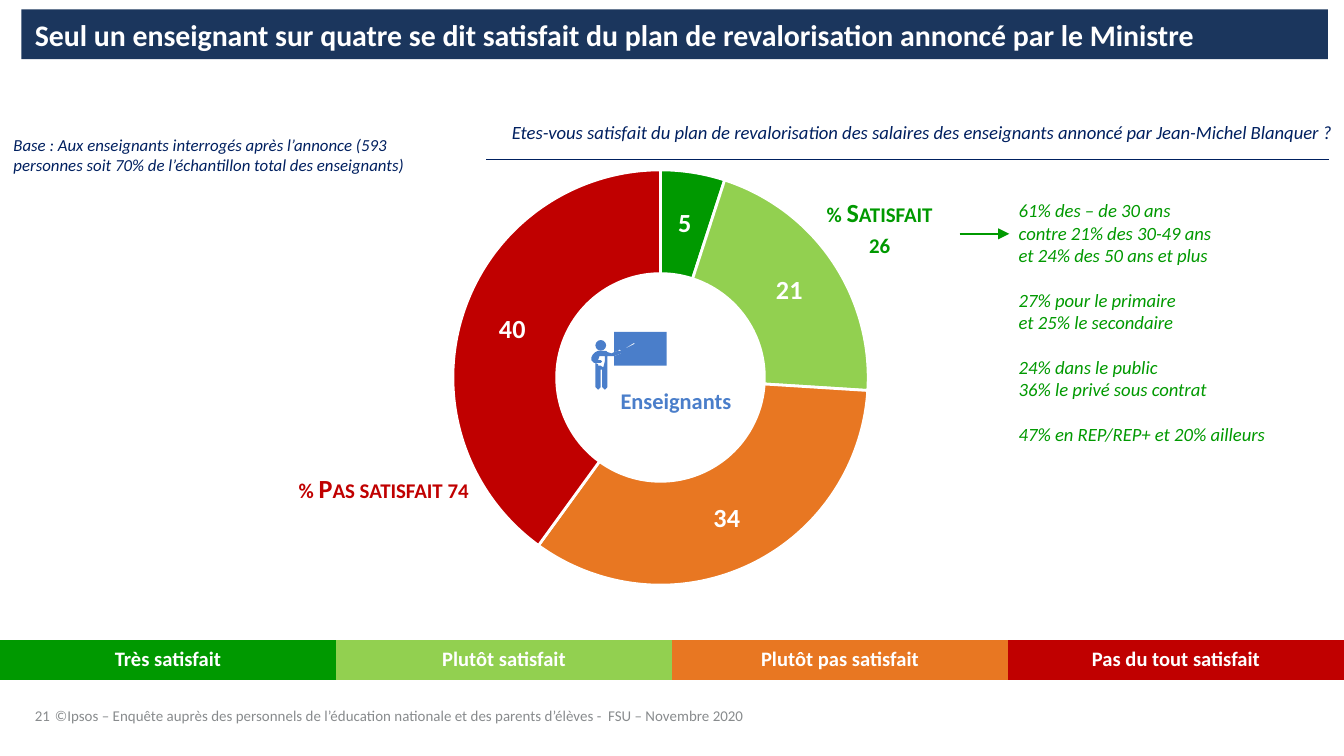
from pptx import Presentation
from pptx.chart.data import CategoryChartData as ChartData
from pptx.dml.color import RGBColor
from pptx.enum.chart import XL_CHART_TYPE as Kind
from pptx.enum.shapes import MSO_CONNECTOR as Link, MSO_SHAPE as Form
from pptx.enum.text import MSO_ANCHOR as Anchor, MSO_AUTO_SIZE as Fit, PP_ALIGN as Align
from pptx.oxml import parse_xml
from pptx.oxml.ns import nsdecls, qn
from pptx.util import Inches, Pt

FONT = "Calibri"
NAVY, INK, WHITE, GREY, BLUE = "1B365D", "002060", "FFFFFF", "888B8D", "4A7ECA"
GREEN, RED = "009900", "C00000"
TITLE = "Seul un enseignant sur quatre se dit satisfait du plan de revalorisation annoncé par le Ministre"
ASK = "Etes-vous satisfait du plan de revalorisation des salaires des enseignants annoncé par Jean-Michel Blanquer ?"
BASE = "Base : Aux enseignants interrogés après l’annonce (593 personnes soit 70% de l’échantillon total des enseignants)"
FOOT = "©Ipsos – Enquête auprès des personnels de l’éducation nationale et des parents d’élèves -  FSU – Novembre 2020"
ANSWERS = [
    ("Très satisfait", 5, GREEN),
    ("Plutôt satisfait", 21, "92D050"),
    ("Plutôt pas satisfait", 34, "E87722"),
    ("Pas du tout satisfait", 40, RED),
]
GROUPS = [
    ["61% des – de 30 ans", "contre 21% des 30-49 ans", "et 24% des 50 ans et plus"],
    ["27% pour le primaire", "et 25% le secondaire"],
    ["24% dans le public", "36% le privé sous contrat"],
    ["47% en REP/REP+ et 20% ailleurs"],
]
BOARD = [
    (4.61, 2.6), (4.62, 2.61), (4.72, 2.55), (4.72, 2.56), (4.62, 2.61), (4.62, 2.63),
    (4.57, 2.65), (4.57, 2.72), (4.96, 2.72), (4.96, 2.47), (4.57, 2.47), (4.57, 2.62), (4.6, 2.61),
]
BODY = [
    (4.42, 2.7), (4.43, 2.7), (4.45, 2.7), (4.47, 2.7), (4.48, 2.69), (4.47, 2.68), (4.45, 2.68),
    (4.43, 2.67), (4.43, 2.65), (4.43, 2.67), (4.45, 2.68), (4.46, 2.65), (4.5, 2.65), (4.5, 2.69),
    (4.49, 2.73), (4.48, 2.73), (4.47, 2.72), (4.45, 2.72), (4.45, 2.71), (4.43, 2.7), (4.43, 2.88),
    (4.45, 2.9), (4.47, 2.88), (4.47, 2.75), (4.48, 2.75), (4.48, 2.88), (4.5, 2.9), (4.52, 2.88),
    (4.52, 2.65), (4.57, 2.65), (4.62, 2.63), (4.62, 2.61), (4.6, 2.61), (4.57, 2.62), (4.55, 2.63),
    (4.52, 2.62), (4.51, 2.61), (4.45, 2.61), (4.43, 2.62), (4.41, 2.64), (4.4, 2.66), (4.4, 2.68),
]


def rgb(code):
    return RGBColor.from_string(code)


def paint(shape, code):
    shape.shadow.inherit = False
    shape.fill.solid()
    shape.fill.fore_color.rgb = rgb(code)
    shape.line.fill.background()


def style(font, size, color, bold=False, italic=False):
    font.name, font.size, font.bold, font.italic = FONT, Pt(size), bold, italic
    font.color.rgb = rgb(color)


def write(frame, groups, size, color, align=Align.LEFT, anchor=Anchor.TOP,
          small=False, gap=0, wrap=True, inset=None, lead=None, **look):
    frame.word_wrap, frame.auto_size = wrap, Fit.NONE
    frame.vertical_anchor = anchor
    if inset is not None:
        frame.margin_left = frame.margin_right = Inches(inset)
        frame.margin_top = frame.margin_bottom = Inches(inset)
    groups = [[groups]] if isinstance(groups, str) else groups
    lines = [(text, bool(g) and not i) for g, group in enumerate(groups) for i, text in enumerate(group)]
    for n, (text, opens) in enumerate(lines):
        par = frame.add_paragraph() if n else frame.paragraphs[0]
        par.alignment = align
        if opens:
            par.space_before = Pt(gap)
        if lead:
            par.line_spacing = lead
        for k, piece in enumerate(text.split("\n")):
            if k:
                par.add_line_break()
            run = par.add_run()
            run.text = piece
            style(run.font, size, color, **look)
            if small:
                run._r.get_or_add_rPr().set("cap", "small")
        for stop in par._p.findall(qn("a:br")):
            stop.append(parse_xml(f'<a:rPr {nsdecls("a")} sz="{size * 100}"/>'))


def label(slide, box, text, size, color, **kw):
    shape = slide.shapes.add_textbox(*map(Inches, box))
    write(shape.text_frame, text, size, color, **kw)


def rule(slide, start, end, color, width, arrow=False):
    line = slide.shapes.add_connector(Link.STRAIGHT, *map(Inches, start + end))
    line.line.color.rgb, line.line.width = rgb(color), Pt(width)
    if arrow:
        line.line._get_or_add_ln().append(parse_xml(f'<a:tailEnd {nsdecls("a")} type="triangle"/>'))
    line._element.spPr.append(parse_xml(f'<a:effectLst {nsdecls("a")}/>'))


def add_ring(slide):
    data = ChartData()
    data.categories = [str(n + 1) for n in range(len(ANSWERS))]
    data.add_series("Series 1", [value for _, value, _ in ANSWERS])
    box = map(Inches, (3.07, 1.13, 3.69, 3.36))
    chart = slide.shapes.add_chart(Kind.DOUGHNUT, *box, data).chart
    chart.has_legend = chart.has_title = False
    style(chart.font, 10, "222223")
    plot = chart.plots[0]
    plot.vary_by_categories = True
    plot.has_data_labels = True
    plot.data_labels.show_value = True
    plot.data_labels.show_percentage = False
    style(plot.data_labels.font, 14, WHITE, bold=True)
    for n, (_, _, color) in enumerate(ANSWERS):
        part = plot.series[0].points[n].format
        part.fill.solid()
        part.fill.fore_color.rgb = rgb(color)
        part.line.color.rgb, part.line.width = rgb(WHITE), Pt(1.5)
    area = chart._chartSpace.chart.plotArea
    for old in area.findall(qn("c:layout")):
        area.remove(old)
    spots = "".join(f'<c:{k} val="{v}"/>' for k, v in [
        ("layoutTarget", "inner"), ("xMode", "edge"), ("yMode", "edge"),
        ("x", 0.08), ("y", 0.04), ("w", 0.84), ("h", 0.92)])
    area.insert(0, parse_xml(
        f'<c:layout {nsdecls("c")}><c:manualLayout>{spots}</c:manualLayout></c:layout>'))


def add_icon(slide):
    group = slide.shapes.add_group_shape()
    for dots in (BOARD, BODY):
        first, *rest = [tuple(map(Inches, dot)) for dot in dots]
        pen = group.shapes.build_freeform(*first)
        pen.add_line_segments(rest, close=True)
        paint(pen.convert_to_shape(), BLUE)
    paint(group.shapes.add_shape(Form.OVAL, *map(Inches, (4.43, 2.53, 0.08, 0.08))), BLUE)


def add_key(slide):
    count = len(ANSWERS)
    table = slide.shapes.add_table(1, count, *map(Inches, (0, 4.76, 10, 0.3))).table
    table.first_row = table.horz_banding = False
    table._tbl.tblPr.find(qn("a:tableStyleId")).text = "{2D5ABB26-0587-4C30-8999-92F81FD0307C}"
    for cell, (name, _, color) in zip(table.rows[0].cells, ANSWERS):
        cell.fill.solid()
        cell.fill.fore_color.rgb = rgb(color)
        cell.vertical_anchor = Anchor.MIDDLE
        par = cell.text_frame.paragraphs[0]
        par.alignment = Align.CENTER
        run = par.add_run()
        run.text = name
        style(run.font, 11, WHITE, bold=True)


def main():
    """Build the slide on teacher satisfaction and save it."""
    deck = Presentation()
    deck.slide_width, deck.slide_height = Inches(10), Inches(10 * 9 / 16)
    slide = deck.slides.add_slide(deck.slide_layouts[5])
    title = slide.shapes.title
    title.left, title.top, title.width, title.height = map(Inches, (0.16, 0.07, 9.72, 0.37))
    title.fill.solid()
    title.fill.fore_color.rgb = rgb(NAVY)
    write(title.text_frame, TITLE, 16, WHITE, bold=True, anchor=Anchor.MIDDLE)

    mid = {"anchor": Anchor.MIDDLE}
    tally = {**mid, "align": Align.CENTER, "bold": True, "small": True}
    add_ring(slide)
    label(slide, (3.71, 0.74, 6.38, 0.49), ASK, 10, INK, italic=True, **mid)
    rule(slide, (3.62, 1.19), (9.89, 1.19), INK, 0.5)
    label(slide, (0.1, 1, 3.16, 0.3), BASE, 9, INK, italic=True, inset=0)
    label(slide, (5.85, 1.49, 1.39, 0.41), "% Satisfait\n26", 14, GREEN, **tally)
    label(slide, (2.08, 3.27, 1.55, 0.73), "% Pas satisfait 74", 14, RED, **tally)
    add_key(slide)
    label(slide, (0.26, 5.13, 0.34, 0.26), "21", 8, GREY,
          anchor=Anchor.BOTTOM, inset=0, wrap=False, lead=0.85)
    label(slide, (0.31, 5.21, 7.39, 0.2), FOOT, 8, GREY)
    add_icon(slide)
    label(slide, (4.21, 2.83, 1.64, 0.3), "Enseignants", 12, BLUE, bold=True, align=Align.CENTER)
    label(slide, (7.58, 1.48, 2.31, 1.85), GROUPS, 10, GREEN, italic=True, inset=0, gap=12)
    rule(slide, (7.14, 1.74), (7.51, 1.74), GREEN, 1, arrow=True)
    deck.save("out.pptx")


if __name__ == "__main__":
    main()
